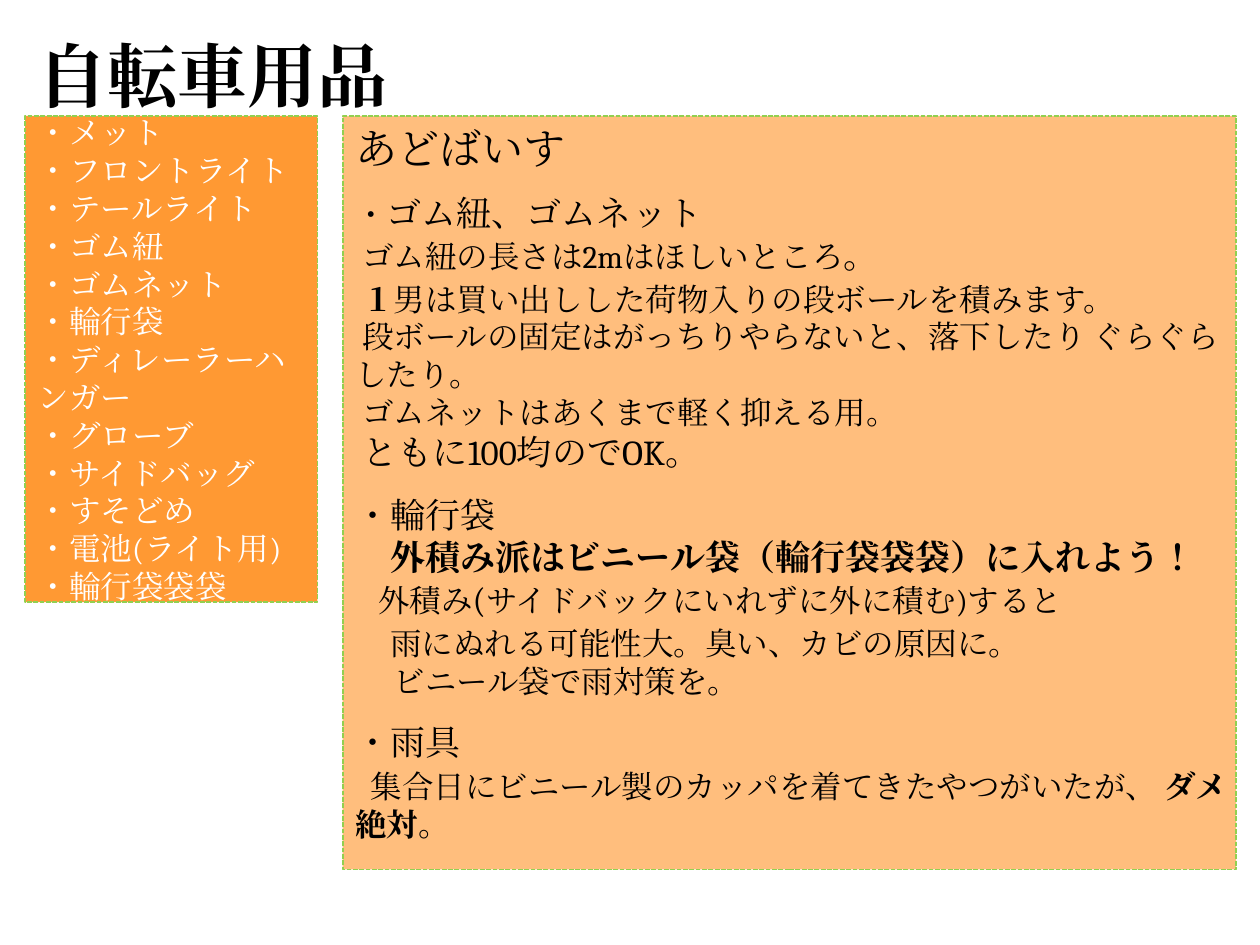
import pptx
import pptx.dml.color
import pptx.enum.dml
import pptx.enum.lang
import pptx.enum.shapes
import pptx.enum.text
import pptx.oxml.ns
import pptx.util
from lxml import etree
from typing import NamedTuple

Pt = pptx.util.Pt
FONT = "Cambria"
BLACK = "000000"
WHITE = "FFFFFF"
PANEL_TOP = 66.24
LIST_LEFT = 14.4
ADVICE_LEFT = 195.84
SECTION_GAP = 12
LINE_GAP = 2.4


class Box(NamedTuple):
    left: float
    top: float
    width: float
    height: float


class Piece(NamedTuple):
    text: str
    size: float = 18
    bold: bool = False


class Line(NamedTuple):
    pieces: list[Piece]
    indent: float = 0
    before: float = 0


SUPPLIES = [
    "メット", "フロントライト", "テールライト", "ゴム紐", "ゴムネット", "輪行袋",
    "ディレーラーハンガー", "グローブ", "サイドバッグ", "すそどめ",
    "電池(ライト用)", "輪行袋袋袋",
]

ADVICE = [
    Line([Piece("・"), Piece("ゴム紐、ゴムネット", 20)]),
    Line([Piece("ゴム紐の長さは2mはほしいところ"), Piece("。", 20)], 4),
    Line([Piece("１", bold=True), Piece("男は買い出しした荷物入りの段ボールを積みます。")], 4, LINE_GAP),
    Line([Piece("段ボールの固定はがっちりやらないと、落下したり ぐらぐらしたり。")], 4),
    Line([Piece("ゴムネットはあくまで軽く抑える用。")], 4),
    Line([Piece("ともに100均のでOK。", 20)], 4.4),
    Line([Piece("・輪行袋", 20)], 0, SECTION_GAP),
    Line([Piece("外積み派はビニール袋（輪行袋袋袋）に入れよう！", 20, True)], 20),
    Line([Piece("外積み"), Piece("(", 20), Piece("サイドバックにいれずに外に積む)すると")], 13.2),
    Line([Piece("雨にぬれる可能性大。臭い、カビの原因に。")], 20, LINE_GAP),
    Line([Piece("ビニール袋で雨対策を。")], 22),
    Line([Piece("・雨具", 20)], 0, SECTION_GAP),
    Line([Piece("集合日にビニール製のカッパを着てきたやつがいたが、 "),
          Piece("ダメ絶対", bold=True), Piece("。")], 8.8, LINE_GAP),
]


def rgb(color: str) -> pptx.dml.color.RGBColor:
    return pptx.dml.color.RGBColor.from_string(color)


def place(shape, box: Box) -> None:
    shape.left, shape.top, shape.width, shape.height = map(Pt, box)


def write(shape, lines: list[Line], color: str, anchor) -> None:
    text_frame = shape.text_frame
    text_frame.word_wrap = True
    text_frame.vertical_anchor = anchor
    for index, line in enumerate(lines):
        paragraph = text_frame.add_paragraph() if index else text_frame.paragraphs[0]
        paragraph.alignment = pptx.enum.text.PP_ALIGN.LEFT
        paragraph.space_before = Pt(line.before)
        if line.indent:
            properties = paragraph._p.get_or_add_pPr()
            properties.set("marL", "0")
            properties.set("indent", str(int(Pt(line.indent))))
        for piece in line.pieces:
            run = paragraph.add_run()
            run.text = piece.text
            run.font.name = FONT
            run.font.size = Pt(piece.size)
            run.font.bold = piece.bold
            run.font.color.rgb = rgb(color)
            run.font.language_id = pptx.enum.lang.MSO_LANGUAGE_ID.JAPANESE
            latin = run._r.rPr.find(pptx.oxml.ns.qn("a:latin"))
            east_asian = etree.Element(pptx.oxml.ns.qn("a:ea"), typeface=FONT)
            latin.addnext(east_asian)


def add_panel(slide, box: Box, color: str):
    shape = slide.shapes.add_shape(
        pptx.enum.shapes.MSO_SHAPE.RECTANGLE, *map(Pt, box))
    shape.shadow.inherit = False
    shape.fill.solid()
    shape.fill.fore_color.rgb = rgb(color)
    shape.line.color.rgb = rgb("92D050")
    shape.line.width = Pt(0.9)
    shape.line.dash_style = pptx.enum.dml.MSO_LINE.SQUARE_DOT
    return shape


def add_text(slide, box: Box, lines: list[Line]) -> None:
    shape = slide.shapes.add_textbox(*map(Pt, box))
    write(shape, lines, BLACK, pptx.enum.text.MSO_ANCHOR.TOP)
    shape.text_frame.auto_size = pptx.enum.text.MSO_AUTO_SIZE.SHAPE_TO_FIT_TEXT


def main() -> None:
    presentation = pptx.Presentation()
    presentation.slide_width = Pt(720)
    presentation.slide_height = Pt(540)
    slide = presentation.slides.add_slide(presentation.slide_layouts[5])

    title = slide.shapes.title
    place(title, Box(LIST_LEFT, 15.12, 226.8, 55.44))
    write(title, [Line([Piece("自転車用品", 40, True)])], BLACK,
          pptx.enum.text.MSO_ANCHOR.TOP)

    supplies = add_panel(slide, Box(LIST_LEFT, PANEL_TOP, 167.04, 277.92), "FF9933")
    write(supplies, [Line([Piece("・" + item)]) for item in SUPPLIES], WHITE,
          pptx.enum.text.MSO_ANCHOR.MIDDLE)

    add_panel(slide, Box(ADVICE_LEFT, PANEL_TOP, 510.48, 430.56), "FFBE7D")
    add_text(slide, Box(ADVICE_LEFT, PANEL_TOP, 221.04, 36),
             [Line([Piece("あどばいす", 24)])])
    add_text(slide, Box(ADVICE_LEFT, 105.84, 524.16, 365.04), ADVICE)

    presentation.save("out.pptx")


if __name__ == "__main__":
    main()
